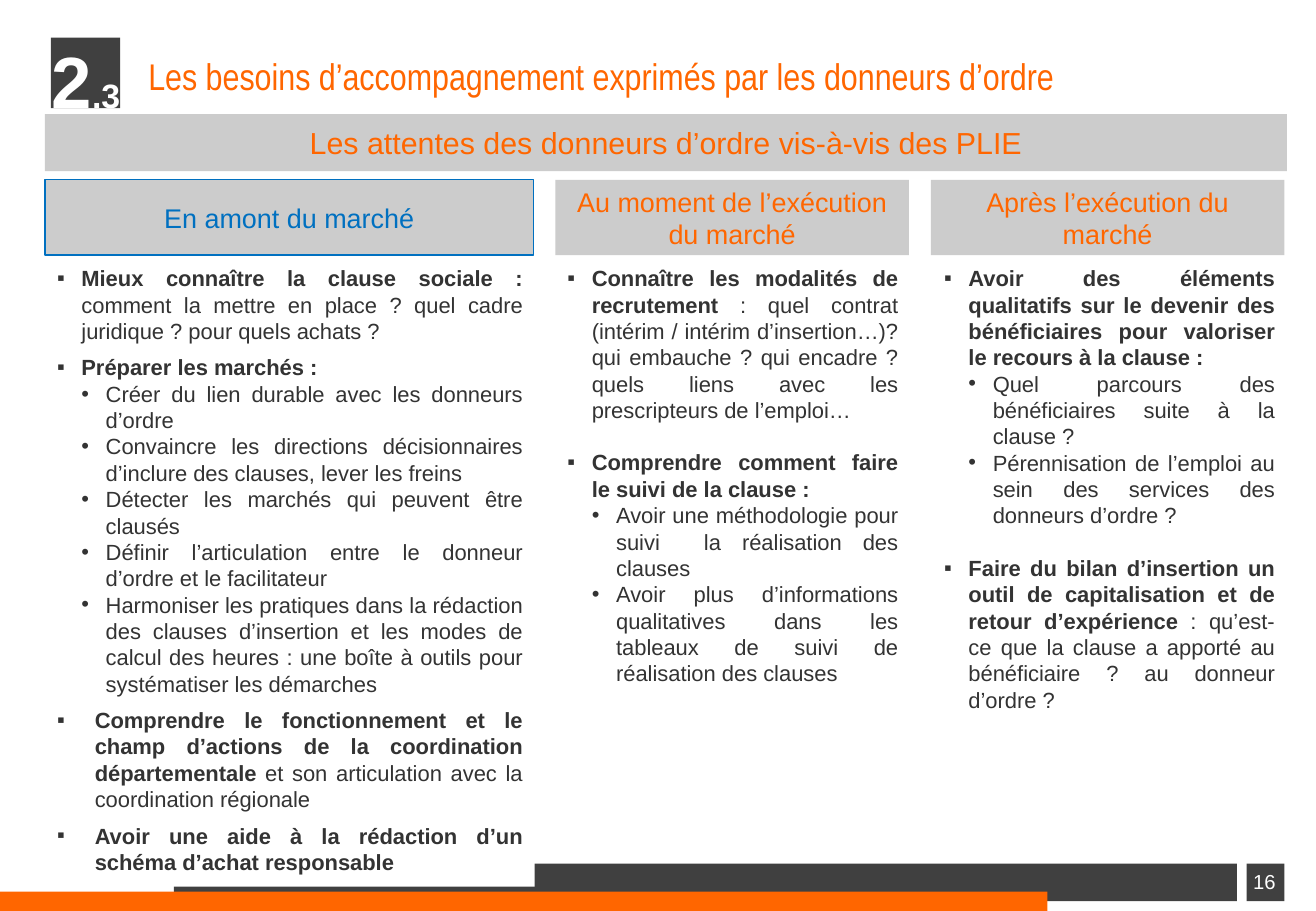
from lxml.etree import SubElement
from pptx import Presentation
from pptx.dml.color import RGBColor
from pptx.enum.shapes import MSO_SHAPE
from pptx.enum.text import MSO_ANCHOR, MSO_AUTO_SIZE, PP_ALIGN
from pptx.oxml.ns import qn
from pptx.util import Inches, Pt

ORANGE, BLUE = "FF6600", "0070C0"
DARK, GREY, INK, WHITE = "404040", "CCCCCC", "333333", "FFFFFF"
GAP, BLANK_LINE = 6, 15.5


def color(value):
    return RGBColor.from_string(value)


def item(*runs, level=0, before=0, indent=0.2):
    """A list entry; runs alternate bold and regular, starting bold on level 0."""
    return runs, level, before, indent


def sub(text):
    return item(text, level=1)


class SlideBuilder:
    font_name = "Arial"
    line_spacing = 1.0

    def __init__(self, deck, layout):
        self.page = deck.slides.add_slide(layout)
        self.holders = {h.placeholder_format.idx: h for h in self.page.placeholders}

    def add_span(self, para, text, **style):
        span = para.add_run()
        span.text = text
        values = {"name": self.font_name, "size": 13, "bold": False, "color": INK, **style}
        span.font.color.rgb = color(values.pop("color"))
        values["size"] = Pt(values["size"])
        for name, value in values.items():
            setattr(span.font, name, value)

    def format_para(self, para, **style):
        values = {"line_spacing": self.line_spacing, "space_before": Pt(0),
                  "space_after": Pt(0), **style}
        for name, value in values.items():
            setattr(para, name, value)

    def format_frame(self, box, **style):
        values = {"word_wrap": True, "auto_size": MSO_AUTO_SIZE.NONE,
                  "vertical_anchor": MSO_ANCHOR.TOP, **style}
        for name, value in values.items():
            setattr(box.text_frame, name, value)
        return box.text_frame

    def rectangle(self, area, fill, line=None):
        box = self.page.shapes.add_shape(MSO_SHAPE.RECTANGLE, *map(Inches, area))
        box.shadow.inherit = False
        box.fill.solid()
        box.fill.fore_color.rgb = color(fill)
        if line:
            box.line.color.rgb = color(line)
            box.line.width = Pt(0.75)
        else:
            box.line.fill.background()
        return box

    def heading(self, area, text, size, ink=ORANGE, line=None):
        box = self.rectangle(area, GREY, line)
        para = self.format_frame(box, vertical_anchor=MSO_ANCHOR.MIDDLE).paragraphs[0]
        self.format_para(para, alignment=PP_ALIGN.CENTER)
        self.add_span(para, text, size=size, color=ink)

    def label(self, area, spans, alignment, **frame_style):
        box = self.page.shapes.add_textbox(*map(Inches, area))
        para = self.format_frame(box, **frame_style).paragraphs[0]
        self.format_para(para, alignment=alignment)
        for text, size, bold in spans:
            self.add_span(para, text, size=size, bold=bold, color=WHITE)

    def place(self, index, area):
        """Move a placeholder to its area, in front of what is already drawn."""
        holder = self.holders.pop(index)
        holder.left, holder.top, holder.width, holder.height = map(Inches, area)
        self.page.shapes._spTree.append(holder._element)
        return holder

    def title(self, area, text):
        para = self.format_frame(self.place(0, area)).paragraphs[0]
        self.format_para(para, alignment=PP_ALIGN.LEFT)
        self.add_span(para, text, name="Arial Narrow", size=22, color=ORANGE)

    def bullets(self, index, area, items, fill=None):
        box = self.place(index, area)
        if fill:
            box.fill.solid()
            box.fill.fore_color.rgb = color(fill)
        frame = self.format_frame(box)
        for number, (runs, level, before, indent) in enumerate(items):
            para = frame.add_paragraph() if number else frame.paragraphs[0]
            self.format_para(para, alignment=PP_ALIGN.JUSTIFY, level=level,
                             space_before=Pt(before))
            properties = para._p.get_or_add_pPr()
            properties.set("marL", str(Inches(indent + 0.2 * level)))
            properties.set("indent", str(-Inches(indent)))
            SubElement(properties, qn("a:buFont"), typeface=self.font_name)
            SubElement(properties, qn("a:buChar"), char="•" if level else "▪")
            for position, text in enumerate(runs):
                self.add_span(para, text, bold=level == 0 and position == 0)

    def remove_empty_placeholders(self):
        for holder in self.holders.values():
            holder._element.getparent().remove(holder._element)


BEFORE_MARKET = [
    item("Mieux connaître la clause sociale : ",
         "comment la mettre en place ? quel cadre juridique ? pour quels achats ?"),
    item("Préparer les marchés :", before=GAP),
    sub("Créer du lien durable avec les donneurs d’ordre"),
    sub("Convaincre les directions décisionnaires d’inclure des clauses, lever les freins"),
    sub("Détecter les marchés qui peuvent être clausés"),
    sub("Définir l’articulation entre le donneur d’ordre et le facilitateur"),
    sub("Harmoniser les pratiques dans la rédaction des clauses d’insertion et les modes de "
        "calcul des heures : une boîte à outils pour systématiser les démarches"),
    item("Comprendre le fonctionnement et le champ d’actions de la coordination départementale ",
         "et son articulation avec la coordination régionale", before=GAP, indent=0.31),
    item("Avoir une aide à la rédaction d’un schéma d’achat responsable",
         before=GAP, indent=0.31),
]
DURING_MARKET = [
    item("Connaître les modalités de recrutement ",
         ": quel contrat (intérim / intérim d’insertion…)? qui embauche ? qui encadre ? "
         "quels liens avec les prescripteurs de l’emploi…"),
    item("Comprendre comment faire le suivi de la clause :", before=BLANK_LINE),
    sub("Avoir une méthodologie pour suivi \tla réalisation des clauses"),
    sub("Avoir plus d’informations qualitatives dans les tableaux de suivi de réalisation "
        "des clauses"),
]
AFTER_MARKET = [
    item("Avoir des éléments qualitatifs sur le devenir des bénéficiaires pour valoriser "
         "le recours à la clause : "),
    sub("Quel parcours des bénéficiaires suite à la clause ?"),
    sub("Pérennisation de l’emploi au sein des services des donneurs d’ordre ?"),
    item("Faire du bilan d’insertion un outil de capitalisation et de retour d’expérience ",
         ": qu’est-ce que la clause a apporté au bénéficiaire ? au donneur d’ordre ?",
         before=BLANK_LINE),
]


def main():
    deck = Presentation()
    deck.slide_width, deck.slide_height = Inches(10.83), Inches(7.5)
    slide = SlideBuilder(deck, deck.slide_layouts.get_by_name("Comparison"))

    # Footer bars, page number square and section square
    for area, fill in [((1.43, 7.11, 8.75, 0.31), DARK), ((0, 7.34, 8.62, 0.16), ORANGE),
                       ((10.26, 7.11, 0.31, 0.31), DARK), ((0.42, 0.31, 0.57, 0.58), DARK)]:
        slide.rectangle(area, fill)
    slide.label((10.1, 7.11, 0.61, 0.29), [("16", 12, False)], PP_ALIGN.CENTER)
    slide.label((0.42, 0.3, 0.57, 0.57), [("2", 43, True), (".3", 20, True)], PP_ALIGN.RIGHT,
                margin_left=0, margin_top=0, margin_right=0, margin_bottom=0)

    # Title and banner
    slide.title((1.12, 0.39, 9.06, 0.41),
                "Les besoins d’accompagnement exprimés par les donneurs d’ordre")
    slide.heading((0.37, 0.94, 10.22, 0.47),
                  "Les attentes des donneurs d’ordre vis-à-vis des PLIE", 18)

    # Three columns: heading and list, the list a little wider
    columns = [
        (1, 0.37, 0.37, 4.02, 5.17, "En amont du marché", BEFORE_MARKET, BLUE, BLUE, WHITE),
        (2, 4.57, 4.57, 2.91, 3.6, "Au moment de l’exécution du marché", DURING_MARKET,
         ORANGE, None, None),
        (4, 7.66, 7.67, 2.91, 3.82, "Après l’exécution du marché", AFTER_MARKET,
         ORANGE, None, None),
    ]
    for index, left, list_left, width, height, text, items, ink, line, fill in columns:
        slide.heading((left, 1.48, width, 0.62), text, 16, ink, line)
        slide.bullets(index, (list_left, 2.13, width + 0.01, height), items, fill)

    slide.remove_empty_placeholders()
    deck.save("out.pptx")


if __name__ == "__main__":
    main()
